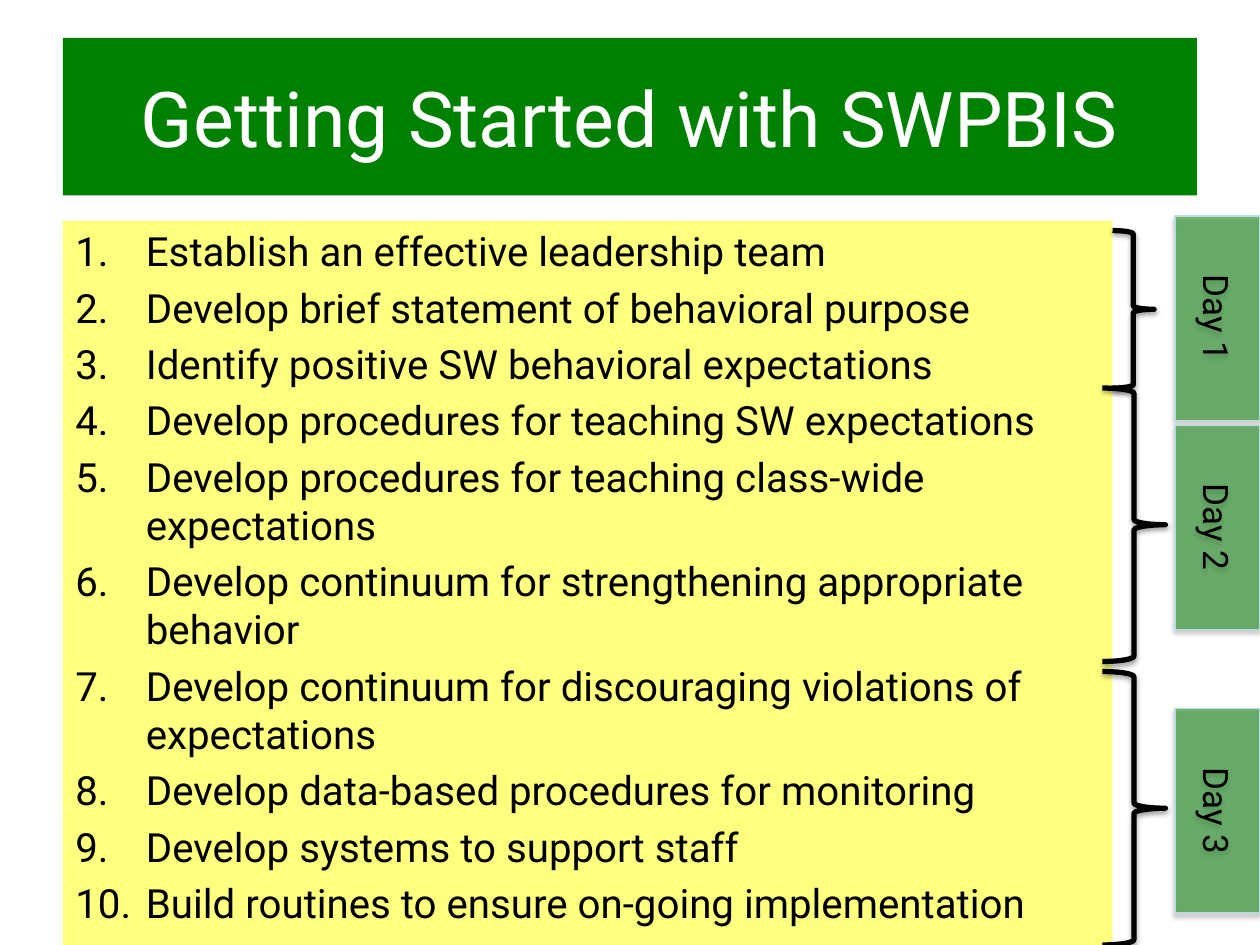
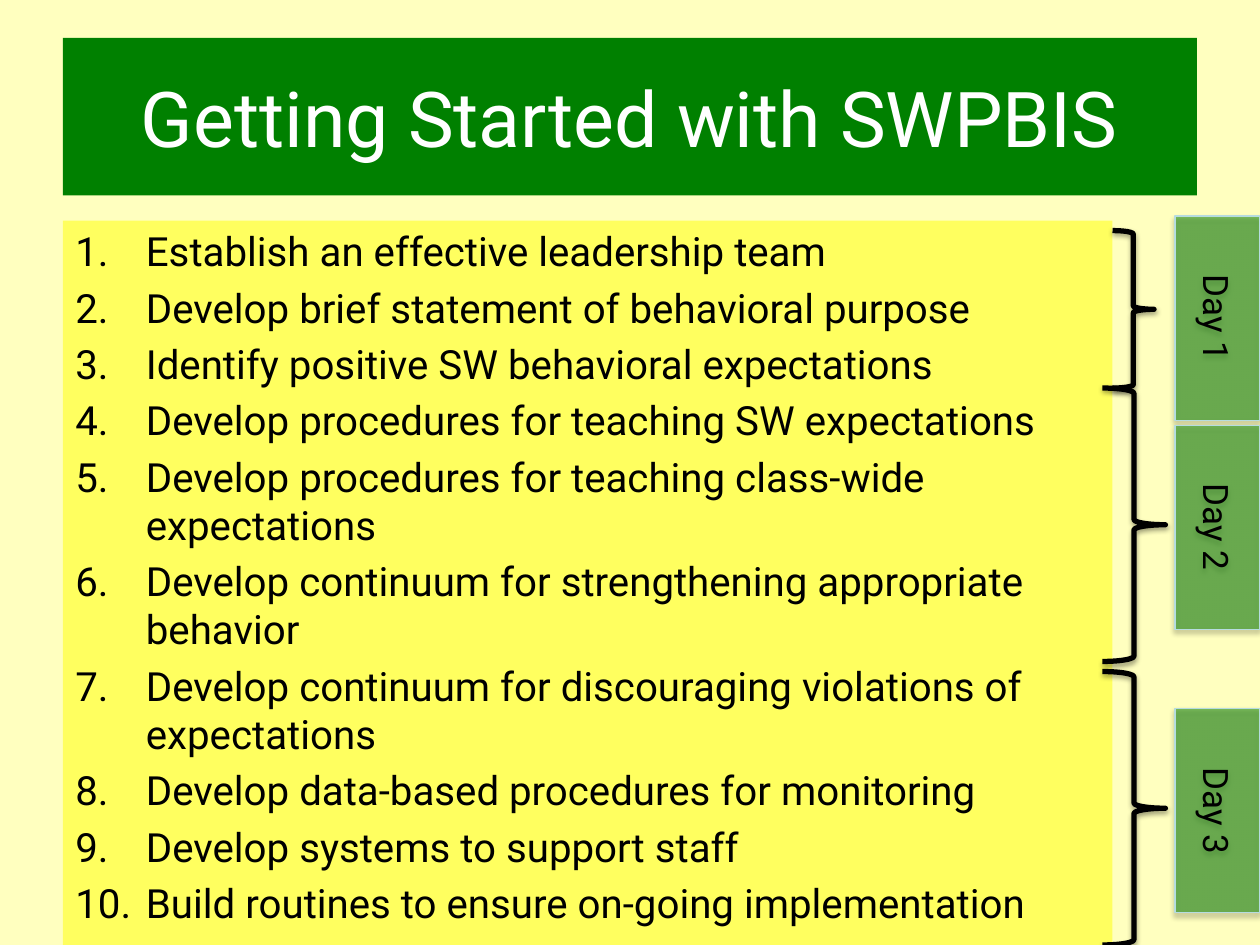
from dataclasses import dataclass

from lxml.etree import SubElement
from pptx import Presentation
from pptx.dml.color import RGBColor
from pptx.enum.shapes import MSO_SHAPE
from pptx.enum.text import MSO_ANCHOR, PP_ALIGN
from pptx.oxml.ns import qn
from pptx.util import Inches, Pt


@dataclass(frozen=True)
class Theme:
    font: str = "Roboto"
    title_size: float = 44
    step_size: float = 23
    tab_size: float = 20
    step_gap: float = 4.6
    green: str = "008000"
    yellow: str = "FFFF00"
    pale_yellow: str = "FFFFBF"
    tab_border: str = "B6DCDF"
    white: str = "FFFFFF"
    black: str = "000000"


THEME = Theme()
TITLE = "Getting Started with SWPBIS"
STEPS = [
    "Establish an effective leadership team",
    "Develop brief statement of behavioral purpose",
    "Identify positive SW behavioral expectations",
    "Develop procedures for teaching SW expectations",
    "Develop procedures for teaching class-wide expectations",
    "Develop continuum for strengthening appropriate behavior",
    "Develop continuum for discouraging violations of expectations",
    "Develop data-based procedures for monitoring",
    "Develop systems to support staff",
    "Build routines to ensure on-going implementation",
]
TITLE_BOX = (0.5, 0.3, 9, 1.25)
STEPS_BOX = (0.5, 1.75, 8.33, 5.75)
# Day label, brace box, top of the unrotated tab
DAYS = [
    ("Day 1", (8.83, 1.83, 0.33, 1.25), 2.19),
    ("Day 2", (8.75, 3.08, 0.5, 2.17), 3.85),
    ("Day 3", (8.75, 5.33, 0.5, 2.17), 6.1),
]
TAB_LEFT, TAB_WIDTH, TAB_HEIGHT = 8.85, 1.62, 0.67


def add_panel(page, box, fill=None, opacity=100, preset=MSO_SHAPE.RECTANGLE):
    """Add a preset shape without line or shadow."""
    panel = page.shapes.add_shape(preset, *map(Inches, box))
    panel.shadow.inherit = False
    panel.line.fill.background()
    if fill is None:
        panel.fill.background()
        return panel
    panel.fill.solid()
    panel.fill.fore_color.rgb = RGBColor.from_string(fill)
    if opacity < 100:
        color = panel.fill._xPr.find(qn("a:solidFill"))[0]
        SubElement(color, qn("a:alpha"), val=str(opacity * 1000))
    return panel


def set_line(panel, color, width):
    panel.line.color.rgb = RGBColor.from_string(color)
    panel.line.width = Pt(width)


def add_shadow(panel, opacity, distance):
    """Drop a soft black shadow straight down."""
    effects = panel._element.spPr.find(qn("a:effectLst"))
    shadow = SubElement(effects, qn("a:outerShdw"), blurRad=str(Pt(3.1)),
                        dist=str(Pt(distance)), dir="5400000", rotWithShape="0")
    color = SubElement(shadow, qn("a:srgbClr"), val=THEME.black)
    SubElement(color, qn("a:alpha"), val=str(opacity * 1000))


def write(para, text, size, color=THEME.black, align=PP_ALIGN.CENTER):
    para.alignment = align
    span = para.add_run()
    span.text = text
    span.font.name = THEME.font
    span.font.size = Pt(size)
    span.font.color.rgb = RGBColor.from_string(color)


def number(para, indent):
    """Give a paragraph an automatic number and a hanging indent."""
    properties = para._p.get_or_add_pPr()
    properties.set("marL", str(Inches(indent)))
    properties.set("indent", str(-Inches(indent)))
    SubElement(properties, qn("a:buFont"), typeface=THEME.font)
    SubElement(properties, qn("a:buAutoNum"), type="arabicPeriod")


def add_title(page, box):
    band = add_panel(page, box, THEME.green)
    frame = band.text_frame
    frame.word_wrap = True
    frame.vertical_anchor = MSO_ANCHOR.MIDDLE
    write(frame.paragraphs[0], TITLE, THEME.title_size, THEME.white)


def add_steps(page, box):
    frame = add_panel(page, box, THEME.yellow, 50).text_frame
    frame.word_wrap = True
    frame.vertical_anchor = MSO_ANCHOR.TOP
    for index, step in enumerate(STEPS):
        para = frame.add_paragraph() if index else frame.paragraphs[0]
        number(para, 0.56)
        if index:
            para.space_before = Pt(THEME.step_gap)
        write(para, step, THEME.step_size, align=PP_ALIGN.LEFT)


def add_brace(page, box):
    brace = add_panel(page, box, preset=MSO_SHAPE.RIGHT_BRACE)
    set_line(brace, THEME.black, 3)
    add_shadow(brace, 38, 1.6)


def add_day_tab(page, box, label):
    tab = add_panel(page, box, THEME.green, 50)
    tab.rotation = 90
    set_line(tab, THEME.tab_border, 0.75)
    add_shadow(tab, 35, 1.8)
    frame = tab.text_frame
    frame.word_wrap = True
    frame.vertical_anchor = MSO_ANCHOR.MIDDLE
    write(frame.paragraphs[0], label, THEME.tab_size)


def add_steps_page(deck, background):
    page = deck.slides.add_slide(deck.slide_layouts[6])
    page.background.fill.solid()
    page.background.fill.fore_color.rgb = RGBColor.from_string(background)
    add_title(page, TITLE_BOX)
    add_steps(page, STEPS_BOX)
    for label, brace_box, tab_top in DAYS:
        add_brace(page, brace_box)
        add_day_tab(page, (TAB_LEFT, tab_top, TAB_WIDTH, TAB_HEIGHT), label)


def main():
    deck = Presentation()
    deck.slide_width, deck.slide_height = Inches(10), Inches(7.5)
    for background in (THEME.white, THEME.pale_yellow):
        add_steps_page(deck, background)
    deck.save("out.pptx")


if __name__ == "__main__":
    main()
